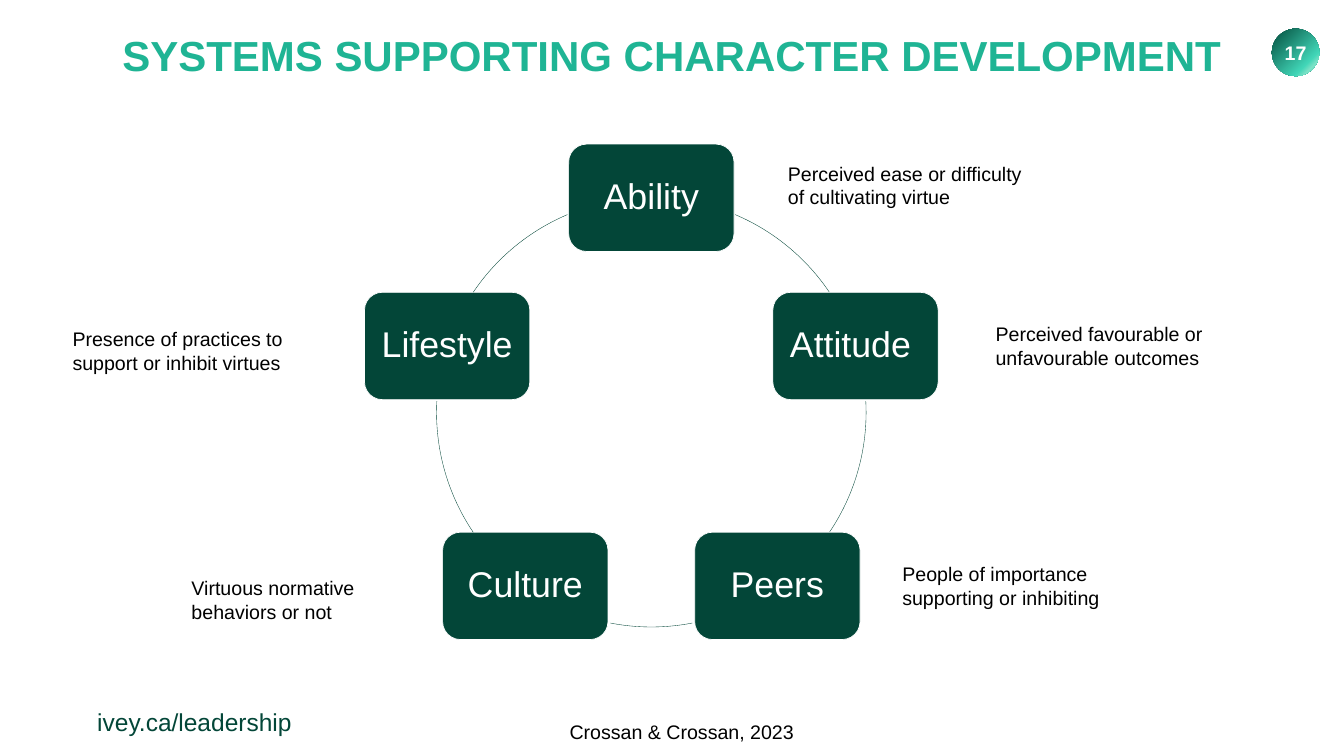
from math import cos, radians, sin

from lxml.etree import SubElement
from pptx import Presentation
from pptx.dml.color import RGBColor
from pptx.enum.shapes import MSO_SHAPE
from pptx.enum.text import MSO_ANCHOR, PP_ALIGN
from pptx.oxml.ns import qn
from pptx.util import Pt

PX = 9144  # 100 px to the inch
COLORS = {"green": "034638", "teal": "1FB494", "white": "FFFFFF", "black": "000000"}
BADGE_STOPS = [(0, "024C3C"), (74, "42D6B8"), (83, "7FE3C8"), (100, "28CCAC")]

presentation = Presentation()
presentation.slide_width = 2666 * PX
presentation.slide_height = 1500 * PX
slide = presentation.slides.add_slide(presentation.slide_layouts[6])


def set_text(shape, text, size, color, bold=False, align=PP_ALIGN.LEFT, wrap=True):
    text_frame = shape.text_frame
    text_frame.word_wrap = wrap
    text_frame.text = text
    paragraph = text_frame.paragraphs[0]
    paragraph.alignment = align
    font = paragraph.runs[0].font
    font.name = "Arial"
    font.size = Pt(size)
    font.bold = bold
    font.color.rgb = RGBColor.from_string(COLORS[color])


def add_shape(kind, left, top, width, height):
    shape = slide.shapes.add_shape(kind, *(round(n) * PX for n in (left, top, width, height)))
    shape.shadow.inherit = False
    return shape


# Slide number badge
badge = add_shape(MSO_SHAPE.OVAL, 2523, 57, 94, 94)
badge.line.fill.background()
badge.fill.gradient()
badge.fill.gradient_angle = 315
stop_list = badge.element.spPr.find(".//" + qn("a:gsLst"))
for stop in list(stop_list):
    stop_list.remove(stop)
for position, color in BADGE_STOPS:
    stop = SubElement(stop_list, qn("a:gs"), pos=str(position * 1000))
    SubElement(stop, qn("a:srgbClr"), val=color)
set_text(badge, "17", 28, "white", bold=True, align=PP_ALIGN.CENTER, wrap=False)
badge.text_frame.vertical_anchor = MSO_ANCHOR.MIDDLE

# Cycle of five boxes on a ring
CENTER_X, CENTER_Y, RADIUS = 1292, 818, 426
BOX_WIDTH, BOX_HEIGHT = 328, 213
labels = ["Ability", "Attitude ", "Peers", "Culture", "Lifestyle"]
arcs = [(293, 326), (357, 34), (79, 101), (146, 183), (214, 247)]  # degrees, clockwise

for index, (label, arc_angles) in enumerate(zip(labels, arcs)):
    angle = radians(72 * index - 90)
    box = add_shape(
        MSO_SHAPE.ROUNDED_RECTANGLE,
        CENTER_X + RADIUS * cos(angle) - BOX_WIDTH / 2,
        CENTER_Y + RADIUS * sin(angle) - BOX_HEIGHT / 2,
        BOX_WIDTH,
        BOX_HEIGHT,
    )
    box.fill.solid()
    box.fill.fore_color.rgb = RGBColor.from_string(COLORS["green"])
    box.line.color.rgb = RGBColor.from_string(COLORS["white"])
    box.line.width = Pt(1)
    set_text(box, label, 51, "white", align=PP_ALIGN.CENTER)
    text_frame = box.text_frame
    text_frame.vertical_anchor = MSO_ANCHOR.MIDDLE
    text_frame.margin_left = text_frame.margin_right = 21 * PX
    text_frame.margin_top = text_frame.margin_bottom = 21 * PX
    text_frame.paragraphs[0].line_spacing = 0.9

    arc = add_shape(MSO_SHAPE.ARC, CENTER_X - RADIUS, CENTER_Y - RADIUS, 2 * RADIUS, 2 * RADIUS)
    arc.fill.background()
    arc.line.color.rgb = RGBColor.from_string(COLORS["green"])
    arc.line.width = Pt(0.5)
    for side, degrees in enumerate(arc_angles):
        arc.adjustments[side] = degrees * 0.6  # 60000ths of a degree over 100000

# Title
title = slide.shapes.add_textbox(222 * PX, 53 * PX, 2222 * PX, 111 * PX)
set_text(title, "SYSTEMS SUPPORTING CHARACTER DEVELOPMENT", 60, "teal",
         bold=True, align=PP_ALIGN.CENTER, wrap=False)

# Notes beside the boxes, source and footer
captions = [
    ("Perceived ease or difficulty of cultivating virtue", 1553, 316, 515, 104, 28, "black"),
    ("Perceived favourable or unfavourable outcomes", 1965, 634, 515, 104, 28, "black"),
    ("People of importance supporting or inhibiting", 1780, 1110, 515, 104, 28, "black"),
    ("Virtuous normative behaviors or not", 370, 1138, 402, 104, 28, "black"),
    ("Presence of practices to support or inhibit virtues", 134, 644, 515, 104, 28, "black"),
    ("Crossan & Crossan, 2023", 1120, 1423, 515, 57, 28, "black"),
    ("ivey.ca/leadership", 183, 1398, 1093, 69, 35, "green"),
]
for text, left, top, width, height, size, color in captions:
    caption = slide.shapes.add_textbox(left * PX, top * PX, width * PX, height * PX)
    set_text(caption, text, size, color)

presentation.save("out.pptx")
